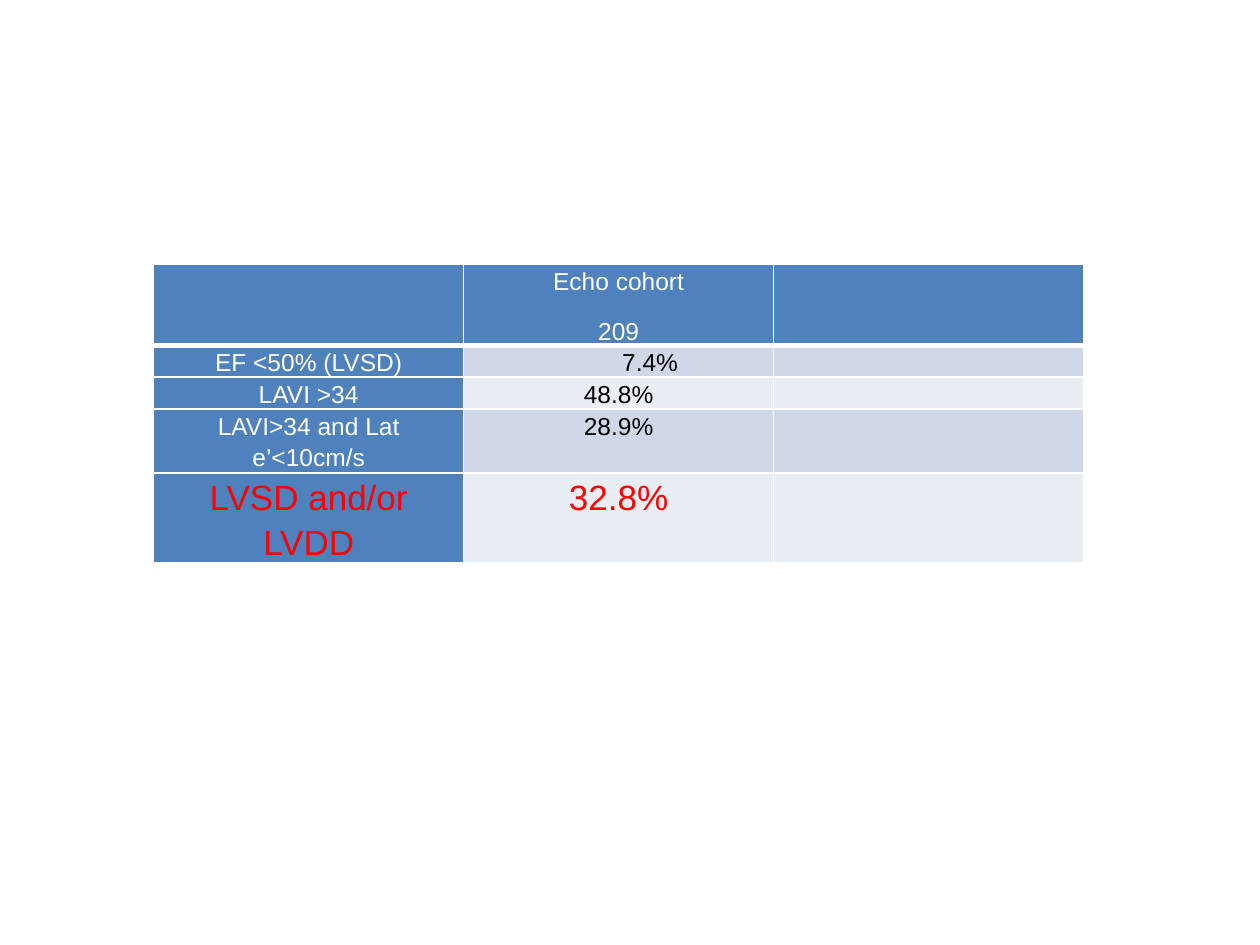
"""Build a slide with a table of echo cohort findings."""
from dataclasses import dataclass

import lxml.etree
import pptx
import pptx.dml.color
import pptx.enum.text
import pptx.oxml.ns
import pptx.util

Inches = pptx.util.Inches
Pt = pptx.util.Pt
COLORS = {
    "header": "4F81BD",
    "band_dark": "D0D8E8",
    "band_light": "E9EDF4",
    "white": "FFFFFF",
    "black": "000000",
    "red": "FF0000",
}
COLUMN_WIDTH = 2.46
CELL_FORMAT = {
    "margin_left": Inches(0.07),
    "margin_right": Inches(0.07),
    "margin_top": Inches(0),
    "margin_bottom": Inches(0),
}
PARAGRAPH_FORMAT = {
    "alignment": pptx.enum.text.PP_ALIGN.CENTER,
    "line_spacing": 1.15,
    "space_after": Pt(10),
}


@dataclass
class Finding:
    label: str
    value: str
    height: float
    size: int = 14
    label_color: str = "white"
    value_color: str = "black"
    indent: float = 0


FINDINGS = [
    Finding("", "Echo cohort\n209", 0.64, value_color="white"),
    Finding("EF <50% (LVSD)", "7.4%", 0.25, indent=0.5),
    Finding("LAVI >34", "48.8%", 0.25),
    Finding("LAVI>34 and Lat e’<10cm/s", "28.9%", 0.51),
    Finding("LVSD and/or LVDD", "32.8%", 0.71, 20, "red", "red"),
]


def rgb(name: str) -> pptx.dml.color.RGBColor:
    """Return the named colour."""
    return pptx.dml.color.RGBColor.from_string(COLORS[name])


def apply_format(target: object, values: dict) -> None:
    """Set every attribute in values on the target."""
    for name, value in values.items():
        setattr(target, name, value)


def add_child(parent: lxml.etree._Element, tag: str, **attributes: str) -> lxml.etree._Element:
    """Append a child element with the given attributes."""
    return lxml.etree.SubElement(parent, pptx.oxml.ns.qn(tag), **attributes)


def draw_borders(cell: pptx.table._Cell, bottom_width: int) -> None:
    """Give the cell white borders on all four sides."""
    properties = cell._tc.get_or_add_tcPr()
    for side in "LRTB":
        width = bottom_width if side == "B" else 1
        line = add_child(properties, f"a:ln{side}", w=str(Pt(width)))
        fill = add_child(line, "a:solidFill")
        add_child(fill, "a:srgbClr", val=COLORS["white"])


def write_cell(cell: pptx.table._Cell, text: str, size: int, color: str, indent: float) -> None:
    """Write centred paragraphs, one for each line of text."""
    cell.text = text
    for para in cell.text_frame.paragraphs:
        apply_format(para, PARAGRAPH_FORMAT)
        if indent:
            para._p.get_or_add_pPr().set("indent", str(Inches(indent)))
        for span in para.runs:
            apply_format(span.font, {"name": "Arial", "size": Pt(size)})
            span.font.color.rgb = rgb(color)
        if not para.runs:
            add_child(para._p, "a:endParaRPr", sz=str(size * 100))


def draw_row(table: pptx.table.Table, index: int, finding: Finding) -> None:
    """Fill one table row with a finding."""
    table.rows[index].height = Inches(finding.height)
    band = "band_dark" if index % 2 else "band_light"
    texts = [
        (finding.label, finding.label_color, 0),
        (finding.value, finding.value_color, finding.indent),
        ("", "black", 0),
    ]
    for column, (text, color, indent) in enumerate(texts):
        cell = table.cell(index, column)
        apply_format(cell, CELL_FORMAT)
        draw_borders(cell, 1 if index else 3)
        cell.fill.solid()
        cell.fill.fore_color.rgb = rgb("header" if index == 0 or column == 0 else band)
        size = finding.size if text else 14
        write_cell(cell, text, size, color, indent)


def main() -> None:
    """Create and save the deck."""
    deck = pptx.Presentation()
    apply_format(deck, {"slide_width": Inches(10), "slide_height": Inches(7.5)})
    page = deck.slides.add_slide(deck.slide_layouts[6])
    height = sum(finding.height for finding in FINDINGS)
    frame = page.shapes.add_table(
        len(FINDINGS), 3, Inches(1.22), Inches(2.1), Inches(3 * COLUMN_WIDTH), Inches(height)
    )
    for column in frame.table.columns:
        column.width = Inches(COLUMN_WIDTH)
    for index, finding in enumerate(FINDINGS):
        draw_row(frame.table, index, finding)
    deck.save("out.pptx")


if __name__ == "__main__":
    main()
